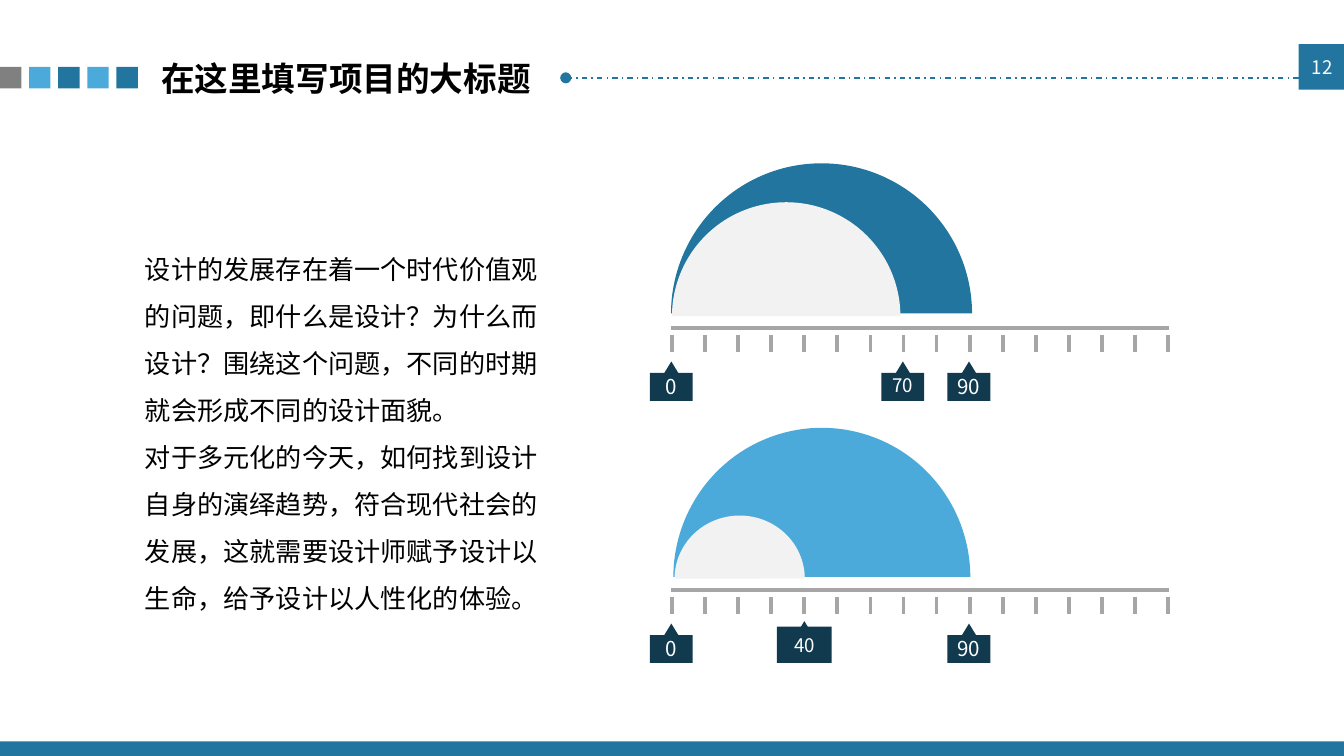
import pptx
import pptx.dml.color
import pptx.enum.dml
import pptx.enum.shapes
import pptx.enum.text
import pptx.oxml
import pptx.util

Pt = pptx.util.Pt
RGBColor = pptx.dml.color.RGBColor
SHAPE = pptx.enum.shapes.MSO_SHAPE
ALIGN = pptx.enum.text.PP_ALIGN
ANCHOR = pptx.enum.text.MSO_ANCHOR

BLUE = RGBColor(0x22, 0x75, 0x9E)
SKY = RGBColor(0x4B, 0xAA, 0xD9)
NAVY = RGBColor(0x11, 0x3A, 0x4F)
GRAY = RGBColor(0x80, 0x80, 0x80)
SILVER = RGBColor(0xA6, 0xA6, 0xA6)
PALE = RGBColor(0xF2, 0xF2, 0xF2)
BLACK = RGBColor(0, 0, 0)
WHITE = RGBColor(0xFF, 0xFF, 0xFF)
FONT = "Noto Sans CJK SC"

TITLE = "在这里填写项目的大标题"
PAGE_NUMBER = "12"
BODY = [
    "设计的发展存在着一个时代价值观的问题，即什么是设计？为什么而设计？围绕这个问题，不同的时期就会形成不同的设计面貌。",
    "对于多元化的今天，如何找到设计自身的演绎趋势，符合现代社会的发展，这就需要设计师赋予设计以生命，给予设计以人性化的体验。",
]
SQUARES = [GRAY, SKY, BLUE, SKY, BLUE]
# Domes are (left, top, width, height, colour); tags are (value, text size).
GAUGES = [
    {"axis": 175.7,
     "domes": [(359.5, 87.5, 161.3, 161.3, BLUE), (360, 108.4, 122.4, 122.4, PALE)],
     "tags": [(0, 11), (90, 11), (70, 10)]},
    {"axis": 316.1,
     "domes": [(360.7, 229.2, 159.1, 160.2, SKY), (361.4, 276.2, 69.8, 67.7, PALE)],
     "tags": [(0, 11), (90, 11)],
     "wide_tag": 40},
]
SCALE_LEFT, TICK_GAP, TICKS = 360, 17.72, 16
DOME_ANGLES = (108.08, 215.89)

deck = pptx.Presentation()
deck.slide_width, deck.slide_height = Pt(720), Pt(405)
page = deck.slides.add_slide(deck.slide_layouts[6])


def add_block(kind, left, top, width, height, color):
    block = page.shapes.add_shape(kind, Pt(left), Pt(top), Pt(width), Pt(height))
    block.shadow.inherit = False
    block.fill.solid()
    block.fill.fore_color.rgb = color
    block.line.fill.background()
    return block


def add_line(x1, y1, x2, y2, color, width):
    line = page.shapes.add_connector(
        pptx.enum.shapes.MSO_CONNECTOR.STRAIGHT, Pt(x1), Pt(y1), Pt(x2), Pt(y2))
    line.line.color.rgb = color
    line.line.width = Pt(width)
    line._element.spPr.append(pptx.oxml.parse_xml(
        '<a:effectLst xmlns:a="http://schemas.openxmlformats.org/drawingml/2006/main"/>'))
    return line


def write(box, texts, size, color, bold=False, anchor=ANCHOR.TOP, **layout):
    frame = box.text_frame
    frame.word_wrap = True
    frame.vertical_anchor = anchor
    for index, text in enumerate(texts):
        para = frame.add_paragraph() if index else frame.paragraphs[0]
        for name, value in layout.items():
            setattr(para, name, value)
        span = para.add_run()
        span.text = text
        for name, value in {"name": FONT, "size": Pt(size), "bold": bold}.items():
            setattr(span.font, name, value)
        span.font.color.rgb = color
        fonts = span._r.get_or_add_rPr()
        east_asian = fonts.makeelement(pptx.oxml.ns.qn("a:ea"), {"typeface": FONT})
        fonts.append(east_asian)


def add_text(left, top, width, height, *content, **layout):
    box = page.shapes.add_textbox(Pt(left), Pt(top), Pt(width), Pt(height))
    write(box, *content, **layout)


def add_gauge(axis, domes, tags, wide_tag=None):
    """Draw half-circles above a ruled scale, with value tags below it."""
    for *place, color in domes:
        dome = add_block(SHAPE.CHORD, *place, color)
        for index, angle in enumerate(DOME_ANGLES):
            dome.adjustments[index] = angle
    add_line(359.5, axis, 626.3, axis, SILVER, 2)
    for index in range(TICKS):
        x = SCALE_LEFT + index * TICK_GAP
        add_line(x, axis + 3.7, x, axis + 13, SILVER, 2)
    for value, size in tags:
        center = SCALE_LEFT + value / 10 * TICK_GAP - 0.4
        add_block(SHAPE.RECTANGLE, center - 11.5, axis + 24.1, 23, 15, NAVY)
        add_block(SHAPE.ISOSCELES_TRIANGLE, center - 5.7, axis + 18, 11.5, 9.4, NAVY)
        add_text(center - 14.5, axis + 21.1, 29, 17, [str(value)], size, WHITE,
                 alignment=ALIGN.CENTER)
    if wide_tag is not None:
        center = SCALE_LEFT + wide_tag / 10 * TICK_GAP
        add_block(SHAPE.ISOSCELES_TRIANGLE, center - 5.7, axis + 16.7, 11.5, 9.4, NAVY)
        label = add_block(SHAPE.RECTANGLE, center - 14.7, axis + 19.7, 29.4, 19.4, NAVY)
        write(label, [str(wide_tag)], 10, WHITE, anchor=ANCHOR.MIDDLE,
              alignment=ALIGN.CENTER)


add_block(SHAPE.RECTANGLE, 0, 397.2, 720, 7.8, BLUE)
for index, color in enumerate(SQUARES):
    add_block(SHAPE.RECTANGLE, index * 15.6, 35.9, 11.5, 11.5, color)
add_text(79.2, 27.4, 215.3, 28.8, [TITLE], 18, BLACK, bold=True, anchor=ANCHOR.MIDDLE)

rule = add_line(695.7, 41.7, 303.1, 41.7, BLUE, 0.75)
rule.line.dash_style = pptx.enum.dml.MSO_LINE.DASH_DOT
outline = rule.line._get_or_add_ln()
outline.append(outline.makeelement(pptx.oxml.ns.qn("a:tailEnd"), {"type": "oval"}))
add_block(SHAPE.RECTANGLE, 695.7, 23.7, 24.3, 24.3, BLUE)
add_text(695.7, 26.6, 32.4, 19.4, [PAGE_NUMBER], 10, WHITE,
         alignment=ALIGN.JUSTIFY, line_spacing=Pt(12))

for gauge in GAUGES:
    add_gauge(**gauge)
add_text(70.6, 123.8, 226.1, 211, BODY, 14, BLACK, line_spacing=1.5)

deck.save("out.pptx")
